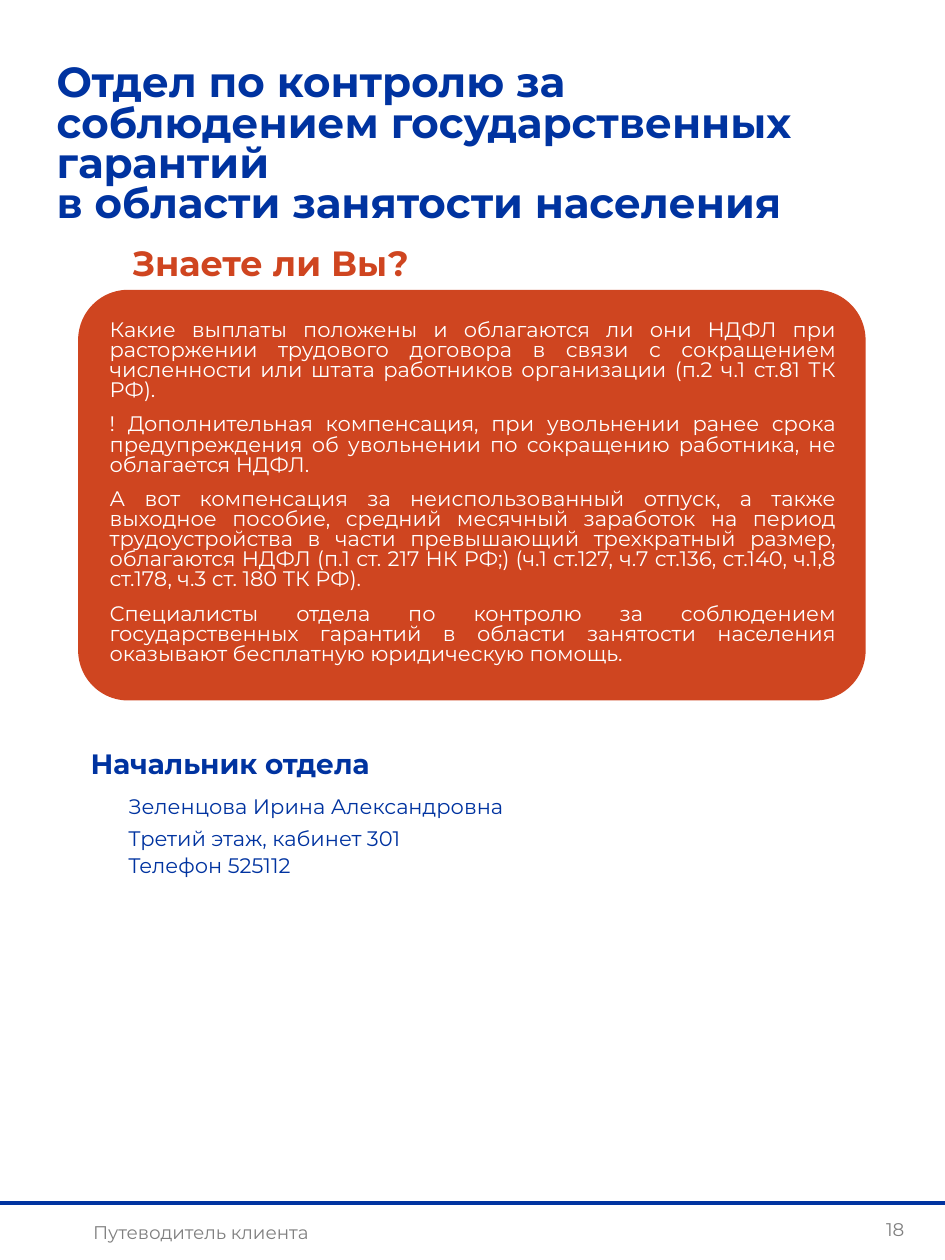
import pptx
import pptx.dml.color
import pptx.enum.shapes
import pptx.enum.text
import pptx.oxml.ns
import pptx.util
from lxml import etree

Inches = pptx.util.Inches
Pt = pptx.util.Pt
Align = pptx.enum.text.PP_ALIGN
RGBColor = pptx.dml.color.RGBColor

BLUE = RGBColor(0x00, 0x33, 0xA0)
RED = RGBColor(0xCF, 0x45, 0x20)
GREY = RGBColor(0x80, 0x80, 0x80)
WHITE = RGBColor(0xFF, 0xFF, 0xFF)

TITLE = [
    "Отдел по контролю за соблюдением государственных гарантий",
    "в области занятости населения",
]
FACTS = [
    "Какие выплаты положены и облагаются ли они НДФЛ при расторжении трудового "
    "договора в связи с сокращением численности или штата работников организации "
    "(п.2 ч.1 ст.81 ТК РФ).",
    "! Дополнительная компенсация, при увольнении ранее срока предупреждения об "
    "увольнении по сокращению работника, не облагается НДФЛ.",
    "А вот компенсация за неиспользованный отпуск, а также выходное пособие, "
    "средний месячный заработок на период трудоустройства в части превышающий "
    "трехкратный размер, облагаются НДФЛ (п.1 ст. 217 НК РФ;) (ч.1 ст.127, "
    "ч.7 ст.136, ст.140, ч.1,8 ст.178, ч.3 ст. 180 ТК РФ).",
    "Специалисты отдела по контролю за соблюдением государственных гарантий в "
    "области занятости населения оказывают бесплатную юридическую помощь.",
]


class Page:
    font = "Montserrat"

    def __init__(self, slide):
        self.slide = slide

    def put(self, shape, lines, size, color, bold=False, align=Align.LEFT,
            gap=1.0, after=0):
        """Set the lines in a shape, one paragraph each."""
        frame = shape.text_frame
        frame.word_wrap = True
        frame.auto_size = pptx.enum.text.MSO_AUTO_SIZE.NONE
        frame.vertical_anchor = pptx.enum.text.MSO_ANCHOR.TOP
        for i, line in enumerate(lines):
            para = frame.add_paragraph() if i else frame.paragraphs[0]
            para.alignment = align
            para.line_spacing = gap
            para.space_before = Pt(0)
            para.space_after = Pt(after)
            run = para.add_run()
            run.text = line
            run.font.name = self.font
            run.font.size = Pt(size)
            run.font.bold = bold
            run.font.color.rgb = color

    def text(self, box, lines, size, color, **style):
        shape = self.slide.shapes.add_textbox(*map(Inches, box))
        self.put(shape, lines, size, color, **style)

    def fill(self, shape, box, lines, size, color, **style):
        """Move a placeholder and set its text without bullets."""
        shape.left, shape.top, shape.width, shape.height = map(Inches, box)
        self.put(shape, lines, size, color, **style)
        for para in shape.text_frame.paragraphs:
            props = para._p.get_or_add_pPr()
            props.set("marL", "0")
            props.set("indent", "0")
            etree.SubElement(props, pptx.oxml.ns.qn("a:buNone"))

    def panel(self, box, color, radius):
        """Add a rounded panel behind all other elements."""
        kind = pptx.enum.shapes.MSO_SHAPE.ROUNDED_RECTANGLE
        shape = self.slide.shapes.add_shape(kind, *map(Inches, box))
        shape.adjustments[0] = radius
        shape.shadow.inherit = False
        shape.fill.solid()
        shape.fill.fore_color.rgb = color
        shape.line.fill.background()
        self.slide.shapes._spTree.insert(2, shape._element)

    def rule(self, top, width, color, weight):
        kind = pptx.enum.shapes.MSO_CONNECTOR.STRAIGHT
        line = self.slide.shapes.add_connector(
            kind, 0, Inches(top), Inches(width), Inches(top))
        line.line.color.rgb = color
        line.line.width = Pt(weight)
        etree.SubElement(line._element.spPr, pptx.oxml.ns.qn("a:effectLst"))


def main():
    deck = pptx.Presentation()
    deck.slide_width, deck.slide_height = Inches(7.5), Inches(10)
    slide = deck.slides.add_slide(deck.slide_layouts[1])
    page = Page(slide)
    title, body = slide.placeholders

    page.panel((0.62, 2.3, 6.25, 3.26), RED, 0.122)
    page.fill(title, (0.35, 0.47, 6.87, 1.4), TITLE, 24, BLUE, bold=True, gap=0.8)
    page.text((0.95, 1.87, 4.08, 0.44), ["Знаете ли Вы?"], 20, RED, bold=True)
    page.fill(body, (0.77, 2.5, 5.97, 2.86), FACTS, 12, WHITE,
              align=Align.JUSTIFY, gap=0.8, after=8)

    page.text((0.62, 5.88, 4.08, 0.37), ["Начальник отдела"], 16, BLUE, bold=True)
    page.text((0.92, 6.23, 4.08, 0.31), ["Зеленцова Ирина Александровна"],
              12, BLUE, align=Align.JUSTIFY, gap=1.1)
    page.text((0.92, 6.48, 4.08, 0.53),
              ["Третий этаж, кабинет 301", "Телефон 525112"],
              12, BLUE, align=Align.JUSTIFY, gap=1.1)

    page.rule(9.55, 7.5, BLUE, 2.25)
    page.text((-0.64, 9.64, 4.47, 0.28), ["Путеводитель клиента"],
              10.5, GREY, align=Align.CENTER)
    page.text((6.88, 9.62, 0.45, 0.28), ["18"], 10.5, GREY, align=Align.CENTER)
    deck.save("out.pptx")


if __name__ == "__main__":
    main()
